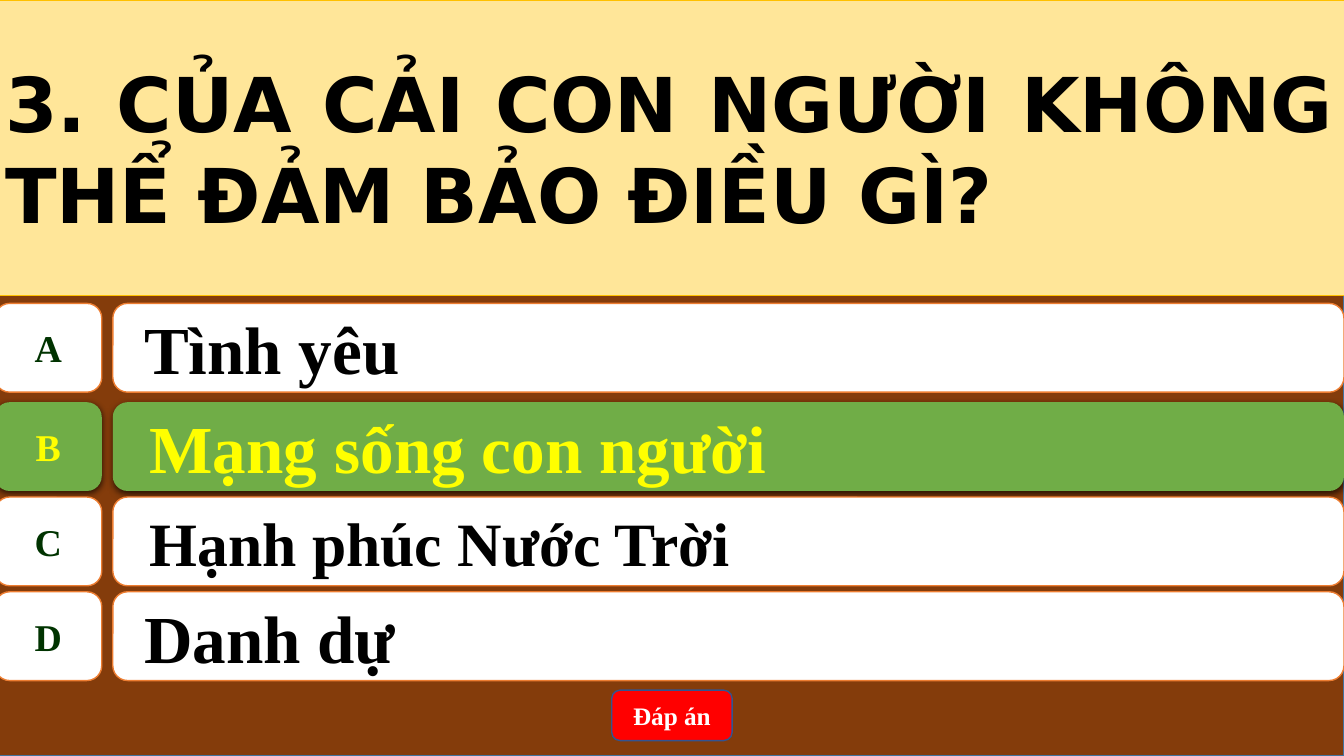
from lxml.etree import SubElement
from pptx import Presentation
from pptx.dml.color import RGBColor
from pptx.enum.shapes import MSO_SHAPE
from pptx.enum.text import MSO_ANCHOR, MSO_AUTO_SIZE, PP_ALIGN
from pptx.oxml.ns import qn
from pptx.util import Pt

BLACK = RGBColor(0x00, 0x00, 0x00)
WHITE = RGBColor(0xFF, 0xFF, 0xFF)
BROWN = RGBColor(0x84, 0x3C, 0x0B)
BLUE = RGBColor(0x43, 0x73, 0x9E)
BUTTON_BLUE = RGBColor(0x32, 0x54, 0x91)
CREAM = RGBColor(0xFF, 0xE6, 0x99)
GOLD = RGBColor(0xFF, 0xC0, 0x00)
ORANGE = RGBColor(0xED, 0x7D, 0x31)
DARK_GREEN = RGBColor(0x00, 0x33, 0x00)
GREEN = RGBColor(0x70, 0xAD, 0x47)
YELLOW = RGBColor(0xFF, 0xFF, 0x00)
RED = RGBColor(0xFF, 0x00, 0x00)

SLIDE_WIDTH, SLIDE_HEIGHT = 960, 540
LEFT = -3.6
FULL_WIDTH = SLIDE_WIDTH - LEFT
ROW_HEIGHT = 63.4
ROW_STEP = 67.7
FIRST_TOP, SECOND_TOP = 216.7, 287.3
LETTER_WIDTH = 76.3
LETTER_GAP = 7.9


def style_box(shape, fill, line=None, line_width=1):
    shape.fill.solid()
    shape.fill.fore_color.rgb = fill
    if line is None:
        shape.line.fill.background()
    else:
        shape.line.color.rgb = line
        shape.line.width = Pt(line_width)


def add_box(shapes, preset, box, fill, line=None):
    shape = shapes.add_shape(preset, *(Pt(length) for length in box))
    shape.shadow.inherit = False
    style_box(shape, fill, line)
    return shape


def write_text(shape, text, size, color, font="Times New Roman",
               align=PP_ALIGN.CENTER, indent=0, wrap=True):
    frame = shape.text_frame
    frame.word_wrap = wrap
    frame.auto_size = MSO_AUTO_SIZE.NONE
    frame.vertical_anchor = MSO_ANCHOR.MIDDLE
    frame.margin_left = Pt(7.2 + indent)
    paragraph = frame.paragraphs[0]
    paragraph.alignment = align
    run = paragraph.add_run()
    run.text = text
    run.font.name = font
    run.font.size = Pt(size)
    run.font.bold = True
    run.font.color.rgb = color


def add_soft_shadow(shape):
    """Fill the shape's empty effect list with a blurred shadow below it."""
    effects = shape.element.spPr.find(qn("a:effectLst"))
    shadow = SubElement(effects, qn("a:outerShdw"), blurRad=str(Pt(4.5)),
                        dist=str(Pt(1.5)), dir="5400000", rotWithShape="0")
    color = SubElement(shadow, qn("a:srgbClr"), val="000000")
    SubElement(color, qn("a:alpha"), val="63000")


def add_question(slide, box, text):
    title = slide.shapes.title
    title.left, title.top, title.width, title.height = (Pt(length) for length in box)
    style_box(title, CREAM, GOLD, line_width=0.5)
    write_text(title, text, 54, BLACK, font="DejaVu Sans", align=PP_ALIGN.JUSTIFY)


def add_backdrop(slide, box):
    backdrop = add_box(slide.shapes, MSO_SHAPE.RECTANGLE, box, BROWN, BLUE)
    slide.shapes.title.element.addprevious(backdrop.element)


def add_answer(slide, box, letter, text, size=48, indent=12, correct=False):
    left, top, width, height = box
    shapes = slide.shapes.add_group_shape().shapes
    fill, line = (GREEN, None) if correct else (WHITE, ORANGE)
    bar_left = left + LETTER_WIDTH + LETTER_GAP
    bar = add_box(shapes, MSO_SHAPE.ROUNDED_RECTANGLE,
                  (bar_left, top, left + width - bar_left, height), fill, line)
    write_text(bar, text, size, YELLOW if correct else BLACK,
               align=PP_ALIGN.LEFT, indent=indent)
    tag = add_box(shapes, MSO_SHAPE.FLOWCHART_ALTERNATE_PROCESS,
                  (left, top, LETTER_WIDTH, height), fill, line)
    write_text(tag, letter, 27, YELLOW if correct else DARK_GREEN, wrap=False)
    if correct:
        add_soft_shadow(bar)
        add_soft_shadow(tag)


def add_answer_button(slide, box):
    button = add_box(slide.shapes, MSO_SHAPE.ROUNDED_RECTANGLE, box, RED, BUTTON_BLUE)
    write_text(button, "Đáp án", 18, WHITE)


def main():
    presentation = Presentation()
    presentation.slide_width = Pt(SLIDE_WIDTH)
    presentation.slide_height = Pt(SLIDE_HEIGHT)
    slide = presentation.slides.add_slide(presentation.slide_layouts[5])

    add_question(slide, (LEFT, 0, FULL_WIDTH, 211),
                 "3. CỦA CẢI CON NGƯỜI KHÔNG THỂ ĐẢM BẢO ĐIỀU GÌ?")
    add_backdrop(slide, (LEFT, 0, FULL_WIDTH, SLIDE_HEIGHT))

    answers = [
        ("A", "Tình yêu", {}),
        ("B", "Mạng sống con người", {"indent": 16, "correct": True}),
        ("C", "Hạnh phúc Nước Trời", {"indent": 16, "size": 44}),
        ("D", "Danh dự", {}),
    ]
    for row, (letter, text, options) in enumerate(answers):
        top = SECOND_TOP + (row - 1) * ROW_STEP if row else FIRST_TOP
        add_answer(slide, (LEFT, top, FULL_WIDTH, ROW_HEIGHT), letter, text, **options)

    add_answer_button(slide, (437, 493, 86, 36))
    presentation.save("out.pptx")


if __name__ == "__main__":
    main()
